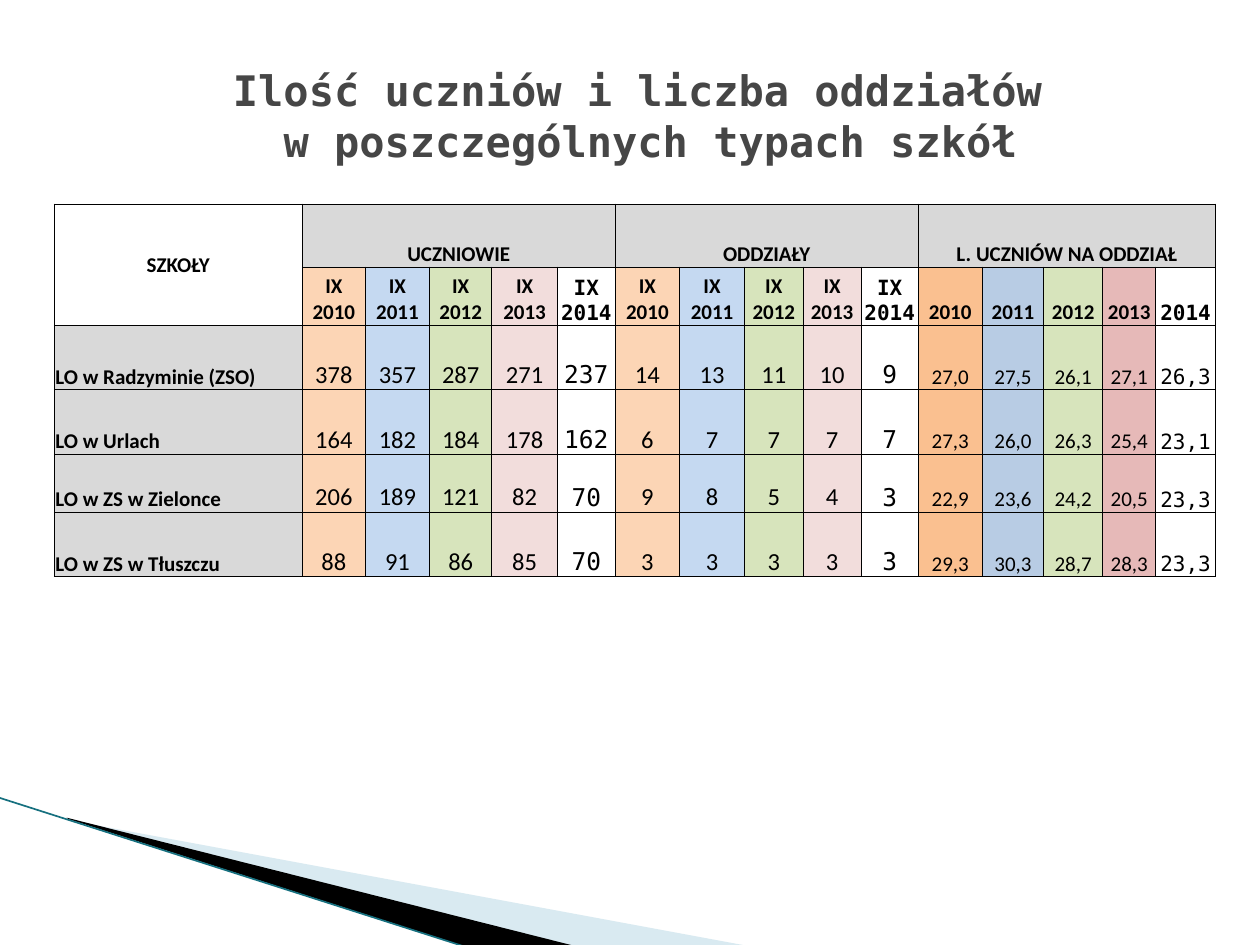
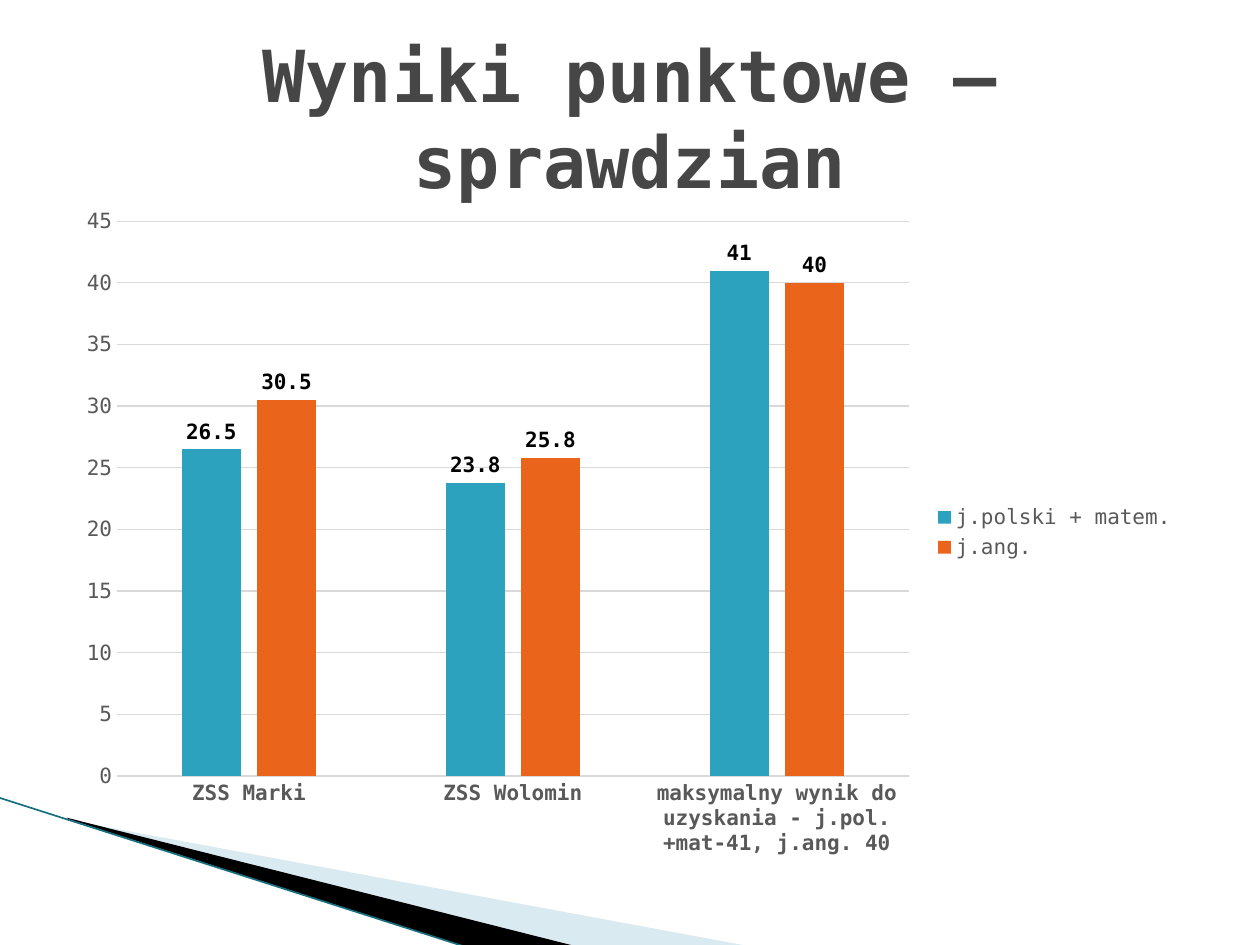
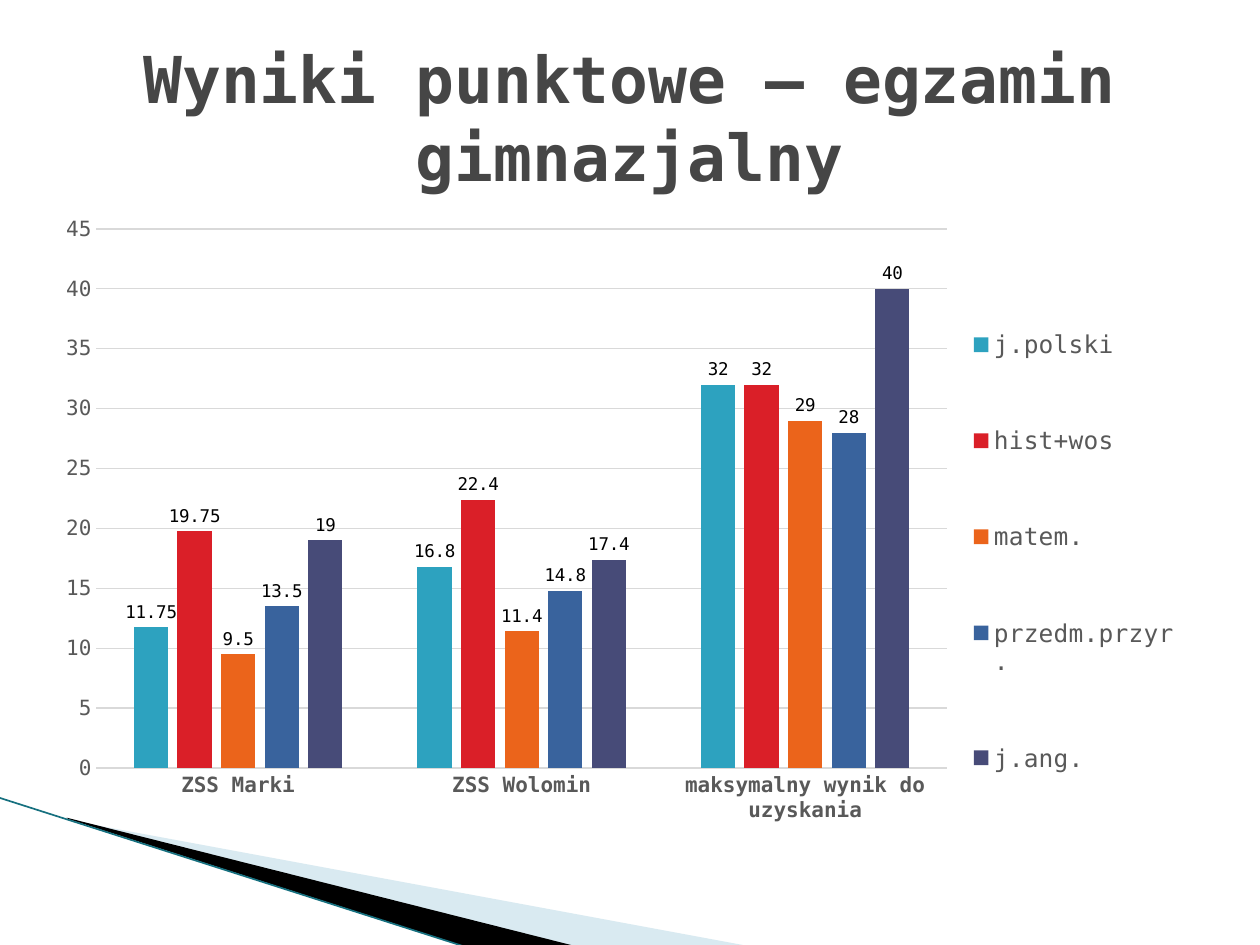
"""Build three slides on school pupil numbers and exam results."""
from pptx import Presentation
from pptx.chart.data import CategoryChartData
from pptx.dml.color import RGBColor
from pptx.enum.chart import XL_CHART_TYPE, XL_LABEL_POSITION, XL_LEGEND_POSITION, XL_TICK_MARK
from pptx.enum.shapes import MSO_CONNECTOR
from pptx.enum.text import MSO_ANCHOR, MSO_AUTO_SIZE, PP_ALIGN
from pptx.oxml import parse_xml
from pptx.oxml.ns import nsdecls
from pptx.util import Pt
from lxml.etree import SubElement

MONO, SANS = "DejaVu Sans Mono", "Calibri"
C = {
    "title": "464646", "text": "000000", "axis": "595959", "grid": "D9D9D9",
    "band": "A0CBDC", "edge": "16707F", "head": "D9D9D9", "head2": "D8D8D8",
    "teal": "2DA2BF", "red": "DA1F28", "orange": "EB641B", "blue": "39639D", "navy": "474B78",
    "peach": "FCD5B5", "sky": "C5D9F1", "green": "D7E4BC", "pink": "F2DDDC",
    "peach2": "FAC090", "sky2": "B8CCE4", "pink2": "E6B9B8",
}
A = "{http://schemas.openxmlformats.org/drawingml/2006/main}"


def style(font, size, color, bold=False, name=MONO):
    font.size, font.bold, font.name = Pt(size), bold, name
    font.color.rgb = RGBColor.from_string(C[color])


def manual_layout(parent, index, percents, inner=False):
    for old in parent.xpath("c:layout"):
        parent.remove(old)
    x, y, w, h = [round(v / 100, 3) for v in percents]
    target = '<c:layoutTarget val="inner"/>' if inner else ""
    parent.insert(index, parse_xml(
        f'<c:layout {nsdecls("c")}><c:manualLayout>{target}'
        '<c:xMode val="edge"/><c:yMode val="edge"/>'
        f'<c:x val="{x}"/><c:y val="{y}"/><c:w val="{w}"/><c:h val="{h}"/>'
        '</c:manualLayout></c:layout>'))


prs = Presentation()
prs.slide_width, prs.slide_height = Pt(720), Pt(540)
layout = prs.slide_layouts[5]

titles = [
    ("Ilość uczniów i liczba oddziałów \vw poszczególnych typach szkół", 24, (48.24, 20.88, 646.56, 90)),
    ("Wyniki punktowe – sprawdzian", 41, (36, 21.6, 648, 90)),
    ("Wyniki punktowe – egzamin gimnazjalny", 36.9, (36, 21.6, 648, 90)),
]
slides = []
for text, size, box in titles:
    s = prs.slides.add_slide(layout)
    sp = s.shapes.title
    sp.left, sp.top, sp.width, sp.height = [Pt(v) for v in box]
    tf = sp.text_frame
    tf.text = text
    tf.auto_size, tf.word_wrap = MSO_AUTO_SIZE.NONE, True
    tf.vertical_anchor = MSO_ANCHOR.MIDDLE
    p = tf.paragraphs[0]
    p.alignment = PP_ALIGN.CENTER
    for r in p.runs:
        style(r.font, size, "title", True)
    slides.append(s)

wedges = [
    ("band", [(39.6, 468.72), (428.4, 540.72), (328.32, 540.72), (39.6, 468)]),
    ("text", [(38.16, 467.28), (329.04, 540.72), (267.84, 541.44), (38.88, 468)]),
]
decor = []
for color, points in wedges:
    points = [(Pt(x), Pt(y)) for x, y in points]
    fb = slides[0].shapes.build_freeform(*points[0])
    fb.add_line_segments(points[1:])
    sp = fb.convert_to_shape()
    sp.shadow.inherit = False
    sp.fill.solid()
    sp.fill.fore_color.rgb = RGBColor.from_string(C[color])
    sp.line.fill.background()
    if color == "band":
        SubElement(sp.element.xpath("p:spPr/a:solidFill/a:srgbClr")[0], A + "alpha", val="40000")
    decor.append(sp)
edge = slides[0].shapes.add_connector(MSO_CONNECTOR.STRAIGHT, Pt(-0.72), Pt(455.76), Pt(267.12), Pt(541.44))
edge.line.color.rgb = RGBColor.from_string(C["edge"])
edge.line.width = Pt(0.95)
SubElement(edge.element.spPr, A + "effectLst")
decor.append(edge)
for i, sp in enumerate(decor):
    sp.element.xpath(".//p:cNvPr")[0].set("id", str(20 + i))
    layout.shapes.element.insert(2 + i, sp.element)

groups = [("UCZNIOWIE", "head"), ("ODDZIAŁY", "head"), ("L. UCZNIÓW NA ODDZIAŁ", "head2")]
years = [str(y) for y in range(2010, 2015)]
rows = [
    ["SZKOŁY"] + [t for name, _ in groups for t in (name, "", "", "", "")],
    [""] + ["IX " + y for y in years] * 2 + years,
    ["LO w Radzyminie (ZSO)", "378", "357", "287", "271", "237", "14", "13", "11", "10", "9",
     "27,0", "27,5", "26,1", "27,1", "26,3"],
    ["LO w Urlach", "164", "182", "184", "178", "162", "6", "7", "7", "7", "7",
     "27,3", "26,0", "26,3", "25,4", "23,1"],
    ["LO w ZS w Zielonce", "206", "189", "121", "82", "70", "9", "8", "5", "4", "3",
     "22,9", "23,6", "24,2", "20,5", "23,3"],
    ["LO w ZS w Tłuszczu", "88", "91", "86", "85", "70", "3", "3", "3", "3", "3",
     "29,3", "30,3", "28,7", "28,3", "23,3"],
]
fills = ["head"] + ["peach", "sky", "green", "pink", None] * 2 + ["peach2", "sky2", "green", "pink2", None]
widths = [141.84, 36, 36.72, 35.6, 37.44, 33.12, 36.72, 37.2, 33.4, 33.3, 32.5, 36.72, 35, 33.84, 30.24, 34.2]
heights = [36, 33.12, 37, 37, 33.12, 36.8]
tbl = slides[0].shapes.add_table(6, 16, Pt(30.96), Pt(116.64), Pt(sum(widths)), Pt(sum(heights))).table
tbl.first_row = tbl.horz_banding = False
for col, w in zip(tbl.columns, widths):
    col.width = Pt(w)
for row, h in zip(tbl.rows, heights):
    row.height = Pt(h)
for i, row in enumerate(rows):
    for j, text in enumerate(row):
        cell = tbl.cell(i, j)
        cell.margin_left = cell.margin_right = cell.margin_top = Pt(0.72)
        cell.margin_bottom = 0
        cell.vertical_anchor = MSO_ANCHOR.MIDDLE if i == j == 0 else MSO_ANCHOR.BOTTOM
        for side in ("lnL", "lnR", "lnT", "lnB"):
            ln = SubElement(cell._tc.get_or_add_tcPr(), A + side, w=str(Pt(0.5)))
            SubElement(SubElement(ln, A + "solidFill"), A + "srgbClr", val=C["text"])
        color = fills[j]
        if i == 0 and j:
            color = groups[(j - 1) // 5][1]
        if (j == 0 and i < 2) or color is None:
            cell.fill.background()
        else:
            cell.fill.solid()
            cell.fill.fore_color.rgb = RGBColor.from_string(C[color])
        if text:
            cell.text = text
            p = cell.text_frame.paragraphs[0]
            p.alignment = PP_ALIGN.LEFT if j == 0 and i else PP_ALIGN.CENTER
            style(p.runs[0].font, 14 if i > 1 and 0 < j < 11 else 12, "text", i < 2 or j == 0,
                  MONO if i and j and j % 5 == 0 else SANS)
tbl.cell(0, 0).merge(tbl.cell(1, 0))
for j in (1, 6, 11):
    tbl.cell(0, j).merge(tbl.cell(0, j + 4))

charts = [
    {"box": (36.72, 111.6, 642.24, 385.2), "label": (12, True), "legend": 12,
     "cats": ["ZSS Marki", "ZSS Wolomin", "maksymalny wynik do uzyskania - j.pol.+mat-41, j.ang. 40"],
     "series": [("j.polski + matem.", "teal", (26.5, 23.8, 41)), ("matem.", "red", ()),
                ("j.ang.", "orange", (30.5, 25.8, 40))]},
    {"box": (20.16, 116.64, 659.52, 374.4), "label": (10, False), "legend": 14,
     "cats": ["ZSS Marki", "ZSS Wolomin", "maksymalny wynik do uzyskania"],
     "series": [("j.polski", "teal", (11.75, 16.8, 32)), ("hist+wos", "red", (19.75, 22.4, 32)),
                ("matem.", "orange", (9.5, 11.4, 29)), ("przedm.przyr.", "blue", (13.5, 14.8, 28)),
                ("j.ang.", "navy", (19, 17.4, 40))],
     "plot": (5.3, 3.8, 73.7, 82.3), "legend_box": (81, 9, 18, 88)},
]
for s, d in zip(slides[1:], charts):
    cd = CategoryChartData()
    cd.categories = d["cats"]
    for name, _, values in d["series"]:
        cd.add_series(name, values)
    chart = s.shapes.add_chart(XL_CHART_TYPE.COLUMN_CLUSTERED, *[Pt(v) for v in d["box"]], cd).chart
    style(chart.font, 10, "text")
    chart.has_title = False
    chart.has_legend = True
    chart.legend.position = XL_LEGEND_POSITION.RIGHT
    chart.legend.include_in_layout = False
    style(chart.legend.font, d["legend"], "axis")
    cat, val = chart.category_axis, chart.value_axis
    for axis in (cat, val):
        axis.major_tick_mark = axis.minor_tick_mark = XL_TICK_MARK.NONE
        style(axis.tick_labels.font, 12, "axis", axis is cat)
    val.minimum_scale, val.maximum_scale, val.major_unit = 0, 45, 5
    val.format.line.fill.background()
    for line in (cat.format.line, val.major_gridlines.format.line):
        line.color.rgb = RGBColor.from_string(C["grid"])
        line.width = Pt(0.75)
    plot = chart.plots[0]
    plot.gap_width, plot.overlap, plot.vary_by_categories = 219, -27, False
    for ser, (_, color, _) in zip(plot.series, d["series"]):
        ser.format.fill.solid()
        ser.format.fill.fore_color.rgb = RGBColor.from_string(C[color])
        labels = ser.data_labels
        labels.show_value = True
        labels.position = XL_LABEL_POSITION.OUTSIDE_END
        size, bold = d["label"]
        style(labels.font, size, "text", bold)
    if "plot" in d:
        manual_layout(chart.element.xpath("c:chart/c:plotArea")[0], 0, d["plot"], inner=True)
        manual_layout(chart.element.xpath("c:chart/c:legend")[0], 1, d["legend_box"])

prs.save("out.pptx")
